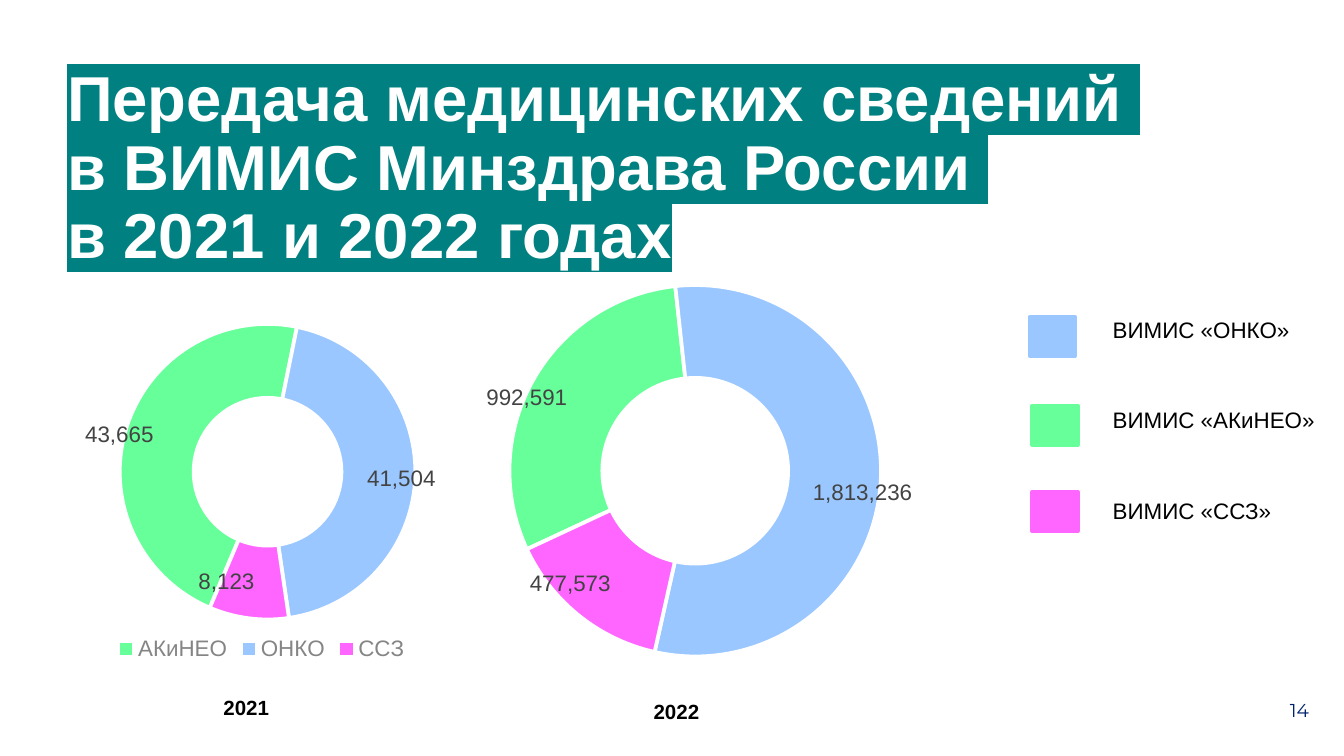
from lxml.etree import SubElement
from pptx import Presentation
from pptx.chart.data import CategoryChartData
from pptx.dml.color import RGBColor
from pptx.enum.chart import XL_CHART_TYPE, XL_LEGEND_POSITION
from pptx.enum.shapes import MSO_SHAPE
from pptx.enum.text import PP_ALIGN
from pptx.oxml import parse_xml
from pptx.oxml.ns import nsdecls, qn
from pptx.util import Cm, Pt

WHITE = RGBColor(0xFF, 0xFF, 0xFF)
BLACK = RGBColor(0x00, 0x00, 0x00)
TEAL = RGBColor(0x00, 0x80, 0x80)
NAVY = RGBColor(0x00, 0x23, 0x6F)
DARK_GREY = RGBColor(0x43, 0x43, 0x43)
GREY = RGBColor(0x85, 0x85, 0x85)
GREEN = RGBColor(0x66, 0xFF, 0x99)
BLUE = RGBColor(0x9A, 0xC7, 0xFF)
PINK = RGBColor(0xFF, 0x66, 0xFF)


def manual_layout(target="", mode="", **values):
    tags = f'<c:layoutTarget val="{target}"/>' if target else ""
    if mode:
        tags += f'<c:xMode val="{mode}"/><c:yMode val="{mode}"/>'
    tags += "".join(f'<c:{k} val="{v}"/>' for k, v in values.items())
    return parse_xml(
        f'<c:layout {nsdecls("c")}><c:manualLayout>{tags}</c:manualLayout></c:layout>'
    )


class SlideBuilder:
    font = "Arial"
    slice_colors = (GREEN, BLUE, PINK)

    def __init__(self, prs):
        self.s = prs.slides.add_slide(prs.slide_layouts[6])

    def style(self, font, size, color, bold=False, name=None):
        font.name = name or self.font
        font.size = Pt(size)
        font.bold = bold
        font.color.rgb = color

    def text(self, box, lines, size, color=BLACK, bold=False, name=None,
             align=PP_ALIGN.LEFT, spacing=None, highlight=None):
        tf = self.s.shapes.add_textbox(*map(Cm, box)).text_frame
        tf.word_wrap = True
        tf.margin_left = tf.margin_right = Cm(0.25)
        tf.margin_top = tf.margin_bottom = Cm(0.25)
        p = tf.paragraphs[0]
        p.alignment = align
        p.line_spacing = spacing
        self.style(p.font, size, color, bold, name)
        for i, line in enumerate(lines):
            if i:
                p.add_line_break()
            r = p.add_run()
            r.text = line
            if highlight:
                mark = SubElement(r.font._element, qn("a:highlight"))
                SubElement(mark, qn("a:srgbClr")).set("val", str(highlight))

    def swatch(self, left, top, color):
        sp = self.s.shapes.add_shape(
            MSO_SHAPE.RECTANGLE, Cm(left), Cm(top), Cm(0.86), Cm(0.74))
        sp.shadow.inherit = False
        sp.fill.solid()
        sp.fill.fore_color.rgb = color
        sp.line.color.rgb = color
        sp.line.width = Pt(2)

    def doughnut(self, box, categories, values, hole, start, plot, shifts, legend=False):
        data = CategoryChartData(number_format="#,##0")
        data.categories = categories
        data.add_series("Series 1", values)
        chart = self.s.shapes.add_chart(
            XL_CHART_TYPE.DOUGHNUT, *map(Cm, box), data).chart
        chart.has_title = False
        self.style(chart.font, 10, DARK_GREY)
        chart.has_legend = legend
        if legend:
            chart.legend.position = XL_LEGEND_POSITION.BOTTOM
            chart.legend.include_in_layout = False
            self.style(chart.legend.font, 12, GREY)

        series = chart.plots[0].series[0]
        labels = series.data_labels
        labels.show_value = True
        labels.number_format = "#,##0"
        labels.number_format_is_linked = False
        self.style(labels.font, 12, DARK_GREY)
        for i, color in enumerate(self.slice_colors):
            point = series.points[i]
            point.format.fill.solid()
            point.format.fill.fore_color.rgb = color
            point.format.line.color.rgb = WHITE
            point.format.line.width = Pt(2)
            self.style(point.data_label.font, 12, DARK_GREY)

        root = chart._chartSpace
        for label, (x, y) in zip(root.xpath(".//c:dLbl"), shifts):
            label.insert(1, manual_layout(x=x, y=y))
            label.insert(2, parse_xml(
                f'<c:numFmt {nsdecls("c")} formatCode="#,##0" sourceLinked="0"/>'))
            label.insert(3, parse_xml(
                f'<c:spPr {nsdecls("c", "a")}><a:solidFill>'
                f'<a:srgbClr val="{WHITE}"/></a:solidFill></c:spPr>'))
        for tag, value in (("holeSize", hole), ("firstSliceAng", start)):
            root.xpath(f".//c:{tag}")[0].set("val", str(value))
        area = root.xpath(".//c:plotArea")[0]
        for old in area.xpath("./c:layout"):
            area.remove(old)
        area.insert(0, manual_layout("inner", "edge", **dict(zip("xywh", plot))))


def main():
    prs = Presentation()
    prs.slide_width, prs.slide_height = Cm(25.4), Cm(14.29)
    slide = SlideBuilder(prs)

    title = ("Передача медицинских сведений ",
             "в ВИМИС Минздрава России ",
             "в 2021 и 2022 годах")
    slide.text((1.02, 1.02, 23.72, 4.45), title, 34, WHITE, bold=True,
               spacing=0.9, highlight=TEAL)
    slide.text((24.13, 13, 1.24, 0.94), ["14"], 10, NAVY, name="Montserrat")
    for year, left, top in (("2021", 2.79, 12.9), ("2022", 10.92, 12.98)):
        slide.text((left, top, 3.73, 0.94), [year], 11, bold=True,
                   align=PP_ALIGN.CENTER)

    slide.doughnut((1.32, 5.31, 7.26, 7.29), ("АКиНЕО", "ОНКО", "ССЗ"),
                   (43665, 41504, 8123), 62, 203, (0.13, 0.11, 0.77, 0.77),
                   ((-0.11, -0.01), (0.06, 0.01), (-0.07, 0)), legend=True)
    slide.doughnut((8.74, 4.5, 8.89, 8.89), ("1", "2", "3"),
                   (992591, 1813236, 477573), 65, 245, (0.1, 0.1, 0.79, 0.79),
                   ((-0.1, -0.01), (0.06, 0.03), (-0.08, 0.01)))

    systems = (("ОНКО", BLUE, 19.46, 5.99),
               ("АКиНЕО", GREEN, 19.51, 7.67),
               ("ССЗ", PINK, 19.51, 9.3))
    for i, (system, color, left, top) in enumerate(systems):
        slide.swatch(left, top, color)
        slide.text((20.78, 5.72 + 1.71 * i, 5.54, 1.02), [f"ВИМИС «{system}»"], 12)

    prs.save("out.pptx")


if __name__ == "__main__":
    main()
